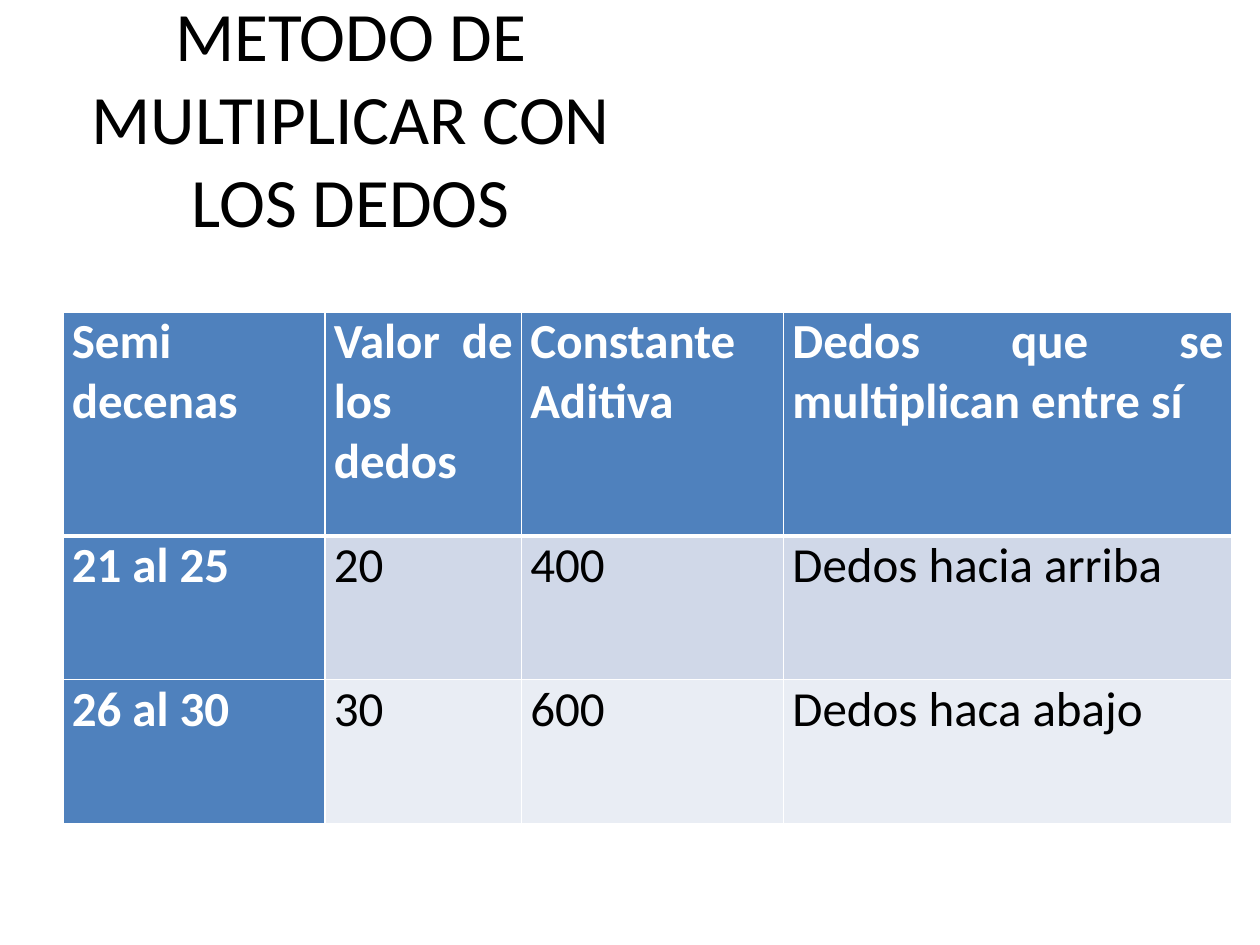
from dataclasses import dataclass

from lxml import etree
from pptx import Presentation
from pptx.dml.color import RGBColor
from pptx.enum.text import MSO_ANCHOR, PP_ALIGN
from pptx.oxml.ns import qn
from pptx.util import Inches, Pt

CENTER, JUSTIFY = PP_ALIGN.CENTER, PP_ALIGN.JUSTIFY
MIDDLE, TOP = MSO_ANCHOR.MIDDLE, MSO_ANCHOR.TOP
FONT = "Calibri"
WHITE, BLACK, BLUE = "FFFFFF", "000000", "4F81BD"
WIDTH, HEIGHT = 10, 7.5
LEFT = 0.05 * WIDTH
COLUMNS = (2.08, 1.56, 2.08, 3.56)


@dataclass
class Row:
    height: float
    fill: str
    cells: tuple[str, ...]
    header: bool = False


ROWS = (
    Row(1.78, BLUE, ("Semi\ndecenas", "Valor de los dedos", "Constante Aditiva",
                     "Dedos que se multiplican entre sí"), header=True),
    Row(1.14, "D0D8E8", ("21 al 25", "20", "400", "Dedos hacia arriba")),
    Row(1.14, "E9EDF4", ("26 al 30", "30", "600", "Dedos haca abajo")),
)


def rgb(value: str) -> RGBColor:
    return RGBColor.from_string(value)


def write(tf, text: str, *, size: float, color: str, align, bold: bool = False) -> None:
    """Write each line of text as a paragraph."""
    tf.word_wrap = True
    for i, line in enumerate(text.split("\n")):
        p = tf.paragraphs[0] if i == 0 else tf.add_paragraph()
        p.alignment = align
        r = p.add_run()
        r.text = line
        r.font.name, r.font.size, r.font.bold = FONT, Pt(size), bold
        r.font.color.rgb = rgb(color)


def add_borders(cell, widths: dict[str, float]) -> None:
    """Put white borders before the fill, as the schema orders them."""
    tc_pr = cell._tc.get_or_add_tcPr()
    for i, (side, width) in enumerate(widths.items()):
        ln = etree.Element(qn(f"a:ln{side}"), w=str(Pt(width)))
        fill = etree.SubElement(ln, qn("a:solidFill"))
        etree.SubElement(fill, qn("a:srgbClr"), val=WHITE)
        tc_pr.insert(i, ln)


def add_title(s, text: str) -> None:
    sp = s.shapes.add_textbox(Inches(LEFT), Inches(0.04 * HEIGHT), Inches(4.57), Inches(1.25))
    sp.text_frame.vertical_anchor = MIDDLE
    write(sp.text_frame, text, size=39.6, color=BLACK, align=CENTER)


def add_grid(s, rows: tuple[Row, ...]) -> None:
    height = sum(row.height for row in rows)
    table = s.shapes.add_table(len(rows), len(COLUMNS), Inches(LEFT), Inches(0.33 * HEIGHT),
                               Inches(sum(COLUMNS)), Inches(height)).table
    for column, width in zip(table.columns, COLUMNS):
        column.width = Inches(width)
    for i, row in enumerate(rows):
        table.rows[i].height = Inches(row.height)
        # The thick rule lies between the header and the first body row
        top = 3 if i and rows[i - 1].header else 1
        bottom = 3 if row.header else 1
        for j, text in enumerate(row.cells):
            cell = table.cell(i, j)
            strong = row.header or j == 0
            cell.fill.solid()
            cell.fill.fore_color.rgb = rgb(BLUE if strong else row.fill)
            cell.margin_left = cell.margin_right = Inches(0.07)
            cell.margin_top = cell.margin_bottom = 0
            cell.vertical_anchor = TOP
            add_borders(cell, {"L": 1, "R": 1, "T": top, "B": bottom})
            write(cell.text_frame, text, size=28, color=WHITE if strong else BLACK,
                  align=JUSTIFY, bold=strong)


def main() -> None:
    prs = Presentation()
    prs.slide_width, prs.slide_height = Inches(WIDTH), Inches(HEIGHT)
    s = prs.slides.add_slide(prs.slide_layouts[6])
    add_title(s, "METODO DE MULTIPLICAR CON LOS DEDOS")
    add_grid(s, ROWS)
    prs.save("out.pptx")


if __name__ == "__main__":
    main()
